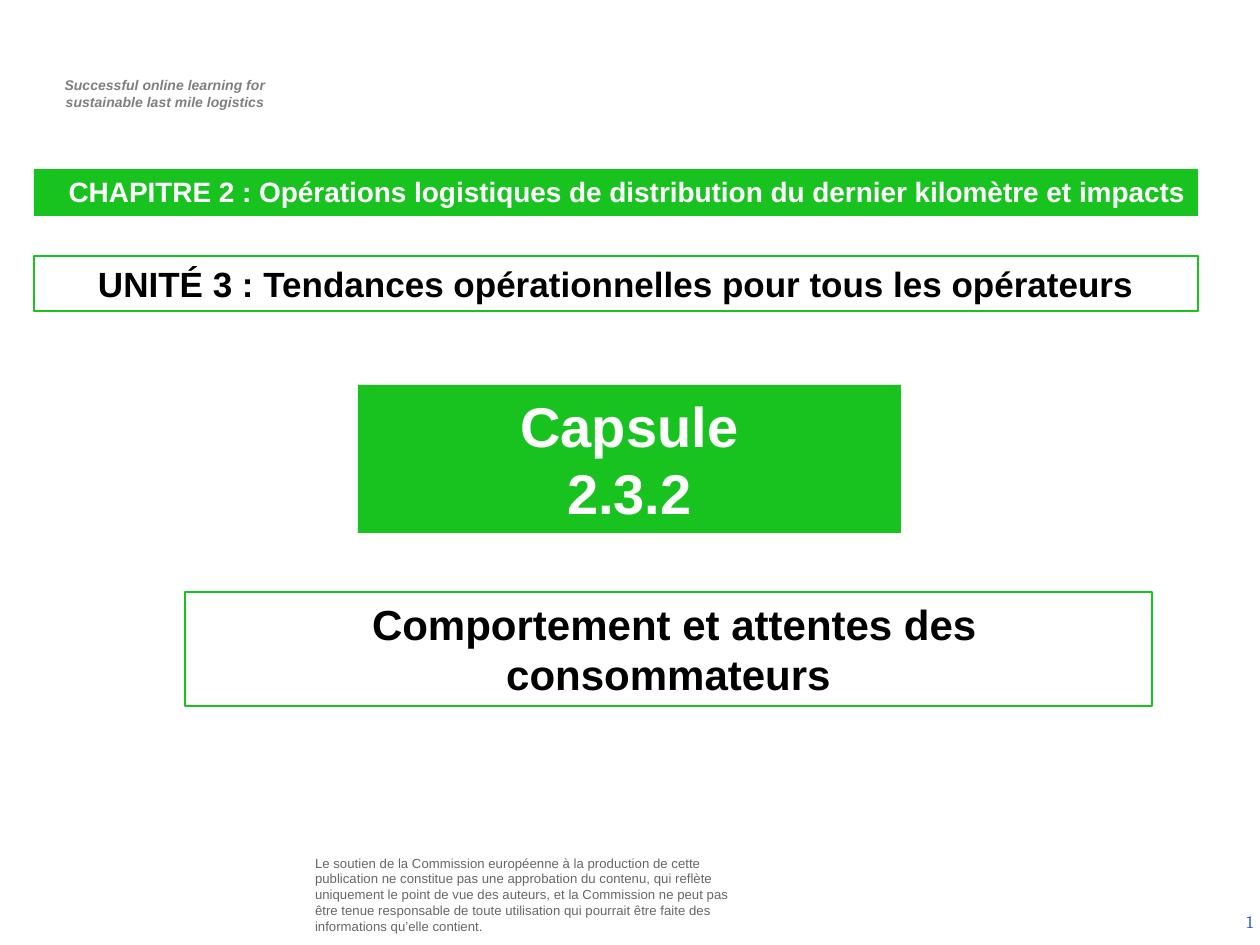
from lxml.etree import SubElement
from pptx import Presentation
from pptx.dml.color import RGBColor
from pptx.enum.shapes import MSO_SHAPE as SHAPE
from pptx.enum.text import MSO_ANCHOR as ANCHOR, MSO_AUTO_SIZE as AUTO, PP_ALIGN as ALIGN
from pptx.oxml.ns import qn
from pptx.util import Emu, Pt

PX = 914400 / 126
GREEN, WHITE, BLACK = "18C320", "FFFFFF", "000000"


def px(n):
    return Emu(round(n * PX))


def color(value):
    return RGBColor.from_string(value)


def place(sp, box):
    for name, n in zip(("left", "top", "width", "height"), box):
        setattr(sp, name, px(n))


def set_font(font, size, hue, **fmt):
    font.color.rgb = color(hue)
    for name, value in {"name": "Arial", "size": Pt(size), **fmt}.items():
        setattr(font, name, value)


def write(sp, lines, size, hue, align=ALIGN.CENTER, anchor=ANCHOR.TOP, inset=(12, 6), **fmt):
    tf = sp.text_frame
    x, y = map(px, inset)
    frame = {"word_wrap": True, "auto_size": AUTO.NONE, "vertical_anchor": anchor,
             "margin_left": x, "margin_right": x, "margin_top": y, "margin_bottom": y}
    for name, value in frame.items():
        setattr(tf, name, value)
    for i, line in enumerate(lines):
        p = tf.add_paragraph() if i else tf.paragraphs[0]
        p.alignment = align
        r = p.add_run()
        r.text = line
        set_font(r.font, size, hue, **fmt)


def text_box(s, box, lines, size, hue, **fmt):
    write(s.shapes.add_textbox(*map(px, box)), lines, size, hue, **fmt)


def banner(s, box, lines, size, fill=None, line=None, align=ALIGN.CENTER):
    sp = s.shapes.add_shape(SHAPE.RECTANGLE, *map(px, box))
    sp.shadow.inherit = False
    paint(sp, fill, line)
    write(sp, lines, size, WHITE if fill else BLACK, align=align, bold=True)


def paint(sp, fill, line):
    if fill:
        sp.fill.solid()
        sp.fill.fore_color.rgb = color(fill)
    else:
        sp.fill.background()
    if line:
        sp.line.color.rgb = color(GREEN)
        sp.line.width = Pt(line)
    else:
        sp.line.fill.background()


def title(s, box, text):
    sp = s.shapes.title
    place(sp, box)
    paint(sp, None, 1.5)
    write(sp, [text], 24, BLACK, bold=True)


def slide_number(s, box):
    sp = s.shapes.add_textbox(*map(px, box))
    write(sp, ["1"], 10, "3366CC", align=ALIGN.RIGHT, anchor=ANCHOR.MIDDLE,
          inset=(7, 6), name="Cambria")
    r = sp.text_frame.paragraphs[0].runs[0]._r
    fld = SubElement(r.getparent(), qn("a:fld"), type="slidenum",
                     id="{B6F15528-21DE-4FAA-801E-634DDDAF4B2B}")
    fld.extend(list(r))
    r.getparent().remove(r)


def headings(s, box):
    x, y, w, h = box
    banner(s, (x, y, w, 47),
           ["CHAPITRE 2 : Opérations logistiques de distribution du dernier kilomètre et impacts"],
           16, fill=GREEN, align=ALIGN.RIGHT)
    banner(s, (x, y + h - 55, w, 55),
           ["UNITÉ 3 : Tendances opérationnelles pour tous les opérateurs"], 20, line=0.75)


def main():
    prs = Presentation()
    prs.slide_width, prs.slide_height = px(1260), px(945)
    s = prs.slides.add_slide(prs.slide_layouts[5])
    text_box(s, (37, 71, 256, 47),
             ["Successful online learning for", "sustainable last mile logistics"],
             8, "7F7F7F", bold=True, italic=True)
    headings(s, (34, 169, 1164, 142))
    banner(s, (358, 385, 543, 148), ["Capsule", "2.3.2"], 32, fill=GREEN)
    title(s, (185, 592, 967, 114), " Comportement et attentes des consommateurs")
    text_box(s, (310, 863, 435, 63),
             ["Le soutien de la Commission européenne à la production de cette publication "
              "ne constitue pas une approbation du contenu, qui reflète uniquement le point "
              "de vue des auteurs, et la Commission ne peut pas être tenue responsable de "
              "toute utilisation qui pourrait être faite des informations qu’elle contient."],
             7.5, "666666", align=ALIGN.LEFT, anchor=ANCHOR.MIDDLE, inset=(5, 5))
    slide_number(s, (971, 898, 289, 47))
    prs.save("out.pptx")


if __name__ == "__main__":
    main()
